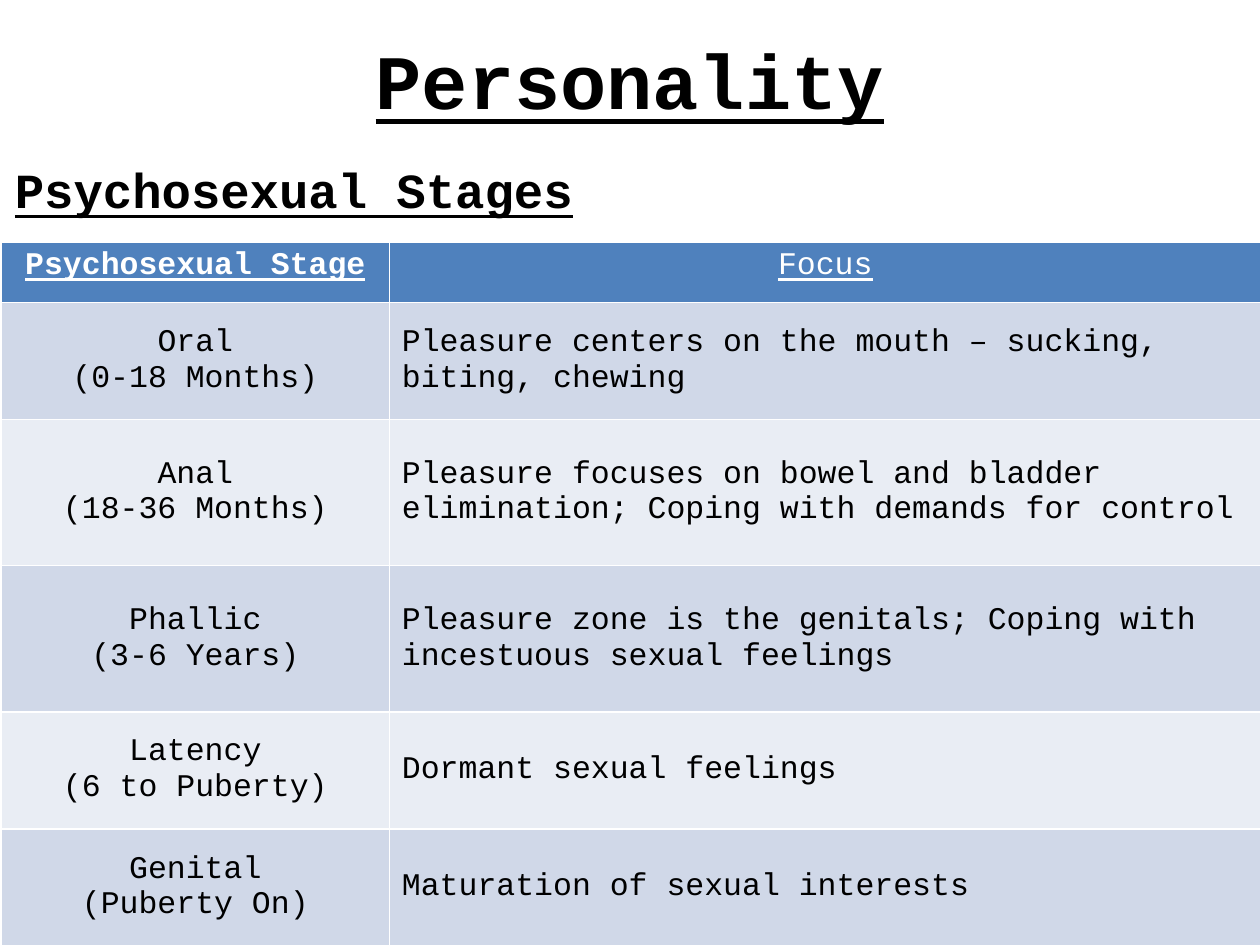
from pptx import Presentation
from pptx.dml.color import RGBColor
from pptx.enum import text as txt
from pptx.util import Inches, Pt

# Content
TITLE = "Personality"
HEADING = "Psychosexual Stages"
HEADER = ("Psychosexual Stage", "Focus")
STAGES = [
    ("Oral\n(0-18 Months)",
     "Pleasure centers on the mouth – sucking, biting, chewing"),
    ("Anal\n(18-36 Months)",
     "Pleasure focuses on bowel and bladder elimination; "
     "Coping with demands for control"),
    ("Phallic\n(3-6 Years)",
     "Pleasure zone is the genitals; Coping with incestuous sexual feelings"),
    ("Latency\n(6 to Puberty)", "Dormant sexual feelings"),
    ("Genital\n(Puberty On)", "Maturation of sexual interests"),
]
WIDTHS = (3.08, 6.92)
HEIGHTS = (0.48, 0.93, 1.16, 1.16, 0.93, 0.93)

THEME = {
    "font": "Courier New",
    "title": 44, "heading": 28, "cell": 18,
    "ink": "000000", "light": "FFFFFF",
    "header": "4F81BD", "bands": ("D0D8E8", "E9EDF4"),
}
LEFT, MID = txt.PP_ALIGN.LEFT, txt.PP_ALIGN.CENTER


def style(frame, size, color="ink", bold=False, line=False, align=LEFT):
    for par in frame.paragraphs:
        par.alignment = align
        font = par.font
        font.name = THEME["font"]
        font.size = Pt(THEME[size])
        font.bold = bold
        font.underline = line
        font.color.rgb = RGBColor.from_string(THEME[color])


def main():
    deck = Presentation()
    deck.slide_width, deck.slide_height = Inches(10), Inches(7.5)
    slide = deck.slides.add_slide(deck.slide_layouts[5])

    # Title
    title = slide.shapes.title
    title.left, title.top = Inches(0), Inches(0)
    title.width, title.height = Inches(10), Inches(1.25)
    title.text = TITLE
    title.text_frame.vertical_anchor = txt.MSO_ANCHOR.MIDDLE
    style(title.text_frame, "title", bold=True, line=True, align=MID)

    # Heading above the table
    box = slide.shapes.add_textbox(
        Inches(0.02), Inches(1.22), Inches(9.98), Inches(0.65))
    frame = box.text_frame
    frame.word_wrap = True
    frame.text = HEADING
    frame.paragraphs[0].space_before = Pt(0.2 * THEME["heading"])
    style(frame, "heading", bold=True, line=True)

    # Table of stages
    rows = [HEADER] + STAGES
    table = slide.shapes.add_table(
        len(rows), len(HEADER), Inches(0.01), Inches(1.92),
        Inches(sum(WIDTHS)), Inches(sum(HEIGHTS))).table
    for col, width in zip(table.columns, WIDTHS):
        col.width = Inches(width)
    for row, height in zip(table.rows, HEIGHTS):
        row.height = Inches(height)

    for r, row in enumerate(rows):
        head = r == 0
        fill = THEME["header"] if head else THEME["bands"][(r - 1) % 2]
        for c, words in enumerate(row):
            cell = table.cell(r, c)
            cell.text = words
            cell.fill.solid()
            cell.fill.fore_color.rgb = RGBColor.from_string(fill)
            if not head:
                cell.vertical_anchor = txt.MSO_ANCHOR.MIDDLE
            style(cell.text_frame, "cell", "light" if head else "ink",
                  bold=head and c == 0, line=head,
                  align=MID if head or c == 0 else LEFT)

    deck.save("out.pptx")


if __name__ == "__main__":
    main()
